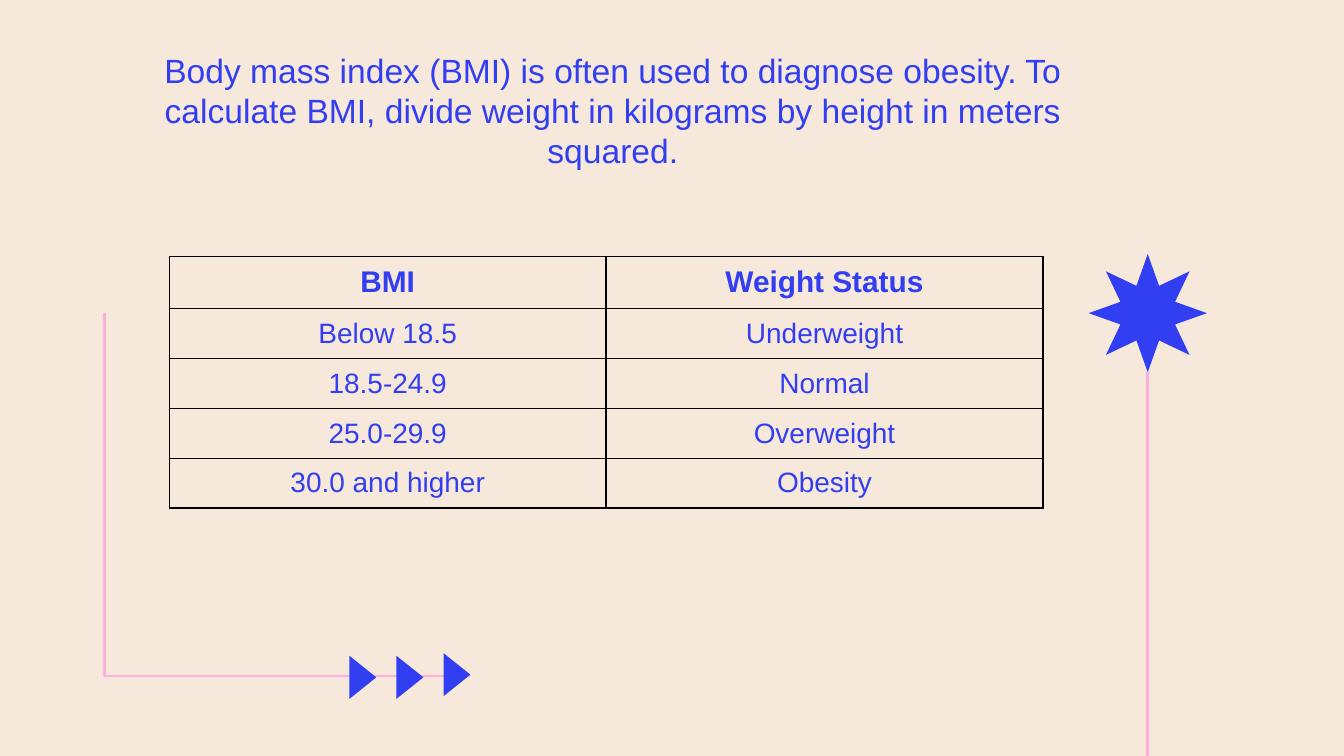
from lxml import etree
from pptx import Presentation, util as u
from pptx.dml.color import RGBColor
from pptx.enum import shapes, text
from pptx.oxml import ns

# Content
INTRO = ("Body mass index (BMI) is often used to diagnose obesity. "
         "To calculate BMI, divide weight in kilograms by height in meters squared.")
ROWS = [
    ("BMI", "Weight Status"),
    ("Below 18.5", "Underweight"),
    ("18.5-24.9", "Normal"),
    ("25.0-29.9", "Overweight"),
    ("30.0 and higher", "Obesity"),
]
HUES = {"back": "F7E8DC", "ink": "313EF2", "pink": "FEADDD", "rule": "000000"}
SIDES = ("left", "top", "right", "bottom")
W = 10
H = W * 9 / 16
KIND = shapes.MSO_SHAPE


def hue(name):
    return RGBColor.from_string(HUES[name])


def put(obj, **vals):
    for key, val in vals.items():
        setattr(obj, key, val)


def place(*box):
    return [u.Inches(v) for v in box]


def add(parent, tag, **vals):
    return etree.SubElement(parent, ns.qn(tag), **vals)


def inset(obj, size):
    put(obj, **{"margin_" + side: u.Inches(size) for side in SIDES})


def write(frame, words, size, bold=False):
    put(frame, text=words, word_wrap=True)
    para = frame.paragraphs[0]
    para.alignment = text.PP_ALIGN.CENTER
    put(para.runs[0].font, name="Arial", size=u.Pt(size), bold=bold)
    para.runs[0].font.color.rgb = hue("ink")
    return para


def stroke(line):
    line.color.rgb = hue("pink")
    line.width = u.Pt(1.5)


def solid(kind, box, ratio, turn=0):
    shape = slide.shapes.add_shape(kind, *place(*box))
    shape.shadow.inherit = False
    shape.rotation = turn
    shape.adjustments[0] = ratio
    shape.fill.solid()
    shape.fill.fore_color.rgb = hue("ink")
    shape.line.fill.background()


def border(cell):
    props = cell._tc.get_or_add_tcPr()
    for spot, side in enumerate(("L", "R", "T", "B")):
        edge = etree.Element(ns.qn("a:ln" + side), w=str(u.Pt(1)))
        add(add(edge, "a:solidFill"), "a:srgbClr", val=HUES["rule"])
        props.insert(spot, edge)


deck = Presentation()
put(deck, slide_width=u.Inches(W), slide_height=u.Inches(H))
slide = deck.slides.add_slide(deck.slide_layouts[1])
slide.background.fill.solid()
slide.background.fill.fore_color.rgb = hue("back")

# Star on its stem
solid(KIND.STAR_8_POINT, (8.1, 1.89, 0.88, 0.88), 0.25)
stem = slide.shapes.add_connector(shapes.MSO_CONNECTOR.STRAIGHT, *place(8.54, 2.77, 8.54, H))
stroke(stem.line)
add(stem._element.spPr, "a:effectLst")

# Corner line with three arrowheads
path = slide.shapes.build_freeform(*place(3.5, 5.03), scale=1)
path.add_line_segments([place(0.78, 5.03), place(0.78, 2.33)], close=False)
corner = path.convert_to_shape()
corner.shadow.inherit = False
corner.fill.background()
stroke(corner.line)
for step, top in enumerate((4.94, 4.94, 4.92)):
    solid(KIND.ISOSCELES_TRIANGLE, (2.54 + 0.35 * step, top, 0.32, 0.2), 0.5, 90)

# Introduction
title = slide.shapes.title
title._element.getparent().remove(title._element)
body = slide.placeholders[1]
left, top, width, height = place(0.83, 0.27, 7.31, 1.38)
put(body, left=left, top=top, width=width, height=height)
put(body.text_frame, auto_size=text.MSO_AUTO_SIZE.NONE,
    vertical_anchor=text.MSO_ANCHOR.TOP)
inset(body.text_frame, 0.1)
para = write(body.text_frame, INTRO, 18)
props = para._p.get_or_add_pPr()
props.set("marL", str(u.Inches(0.15)))
props.set("indent", "0")
add(props, "a:buNone")
put(para, space_before=u.Pt(0), line_spacing=1.0)

# Weight table
grid = slide.shapes.add_table(len(ROWS), 2, *place(1.26, 1.91, 6.5, 1.86)).table
put(grid, first_row=False, horz_banding=False)
for r, row in enumerate(ROWS):
    head = r == 0
    grid.rows[r].height = u.Inches(0.38 if head else 0.37)
    for c, words in enumerate(row):
        cell = grid.cell(r, c)
        write(cell.text_frame, words, 16 if head else 15, head)
        inset(cell, 0.07)
        cell.fill.background()
        border(cell)

deck.save("out.pptx")
